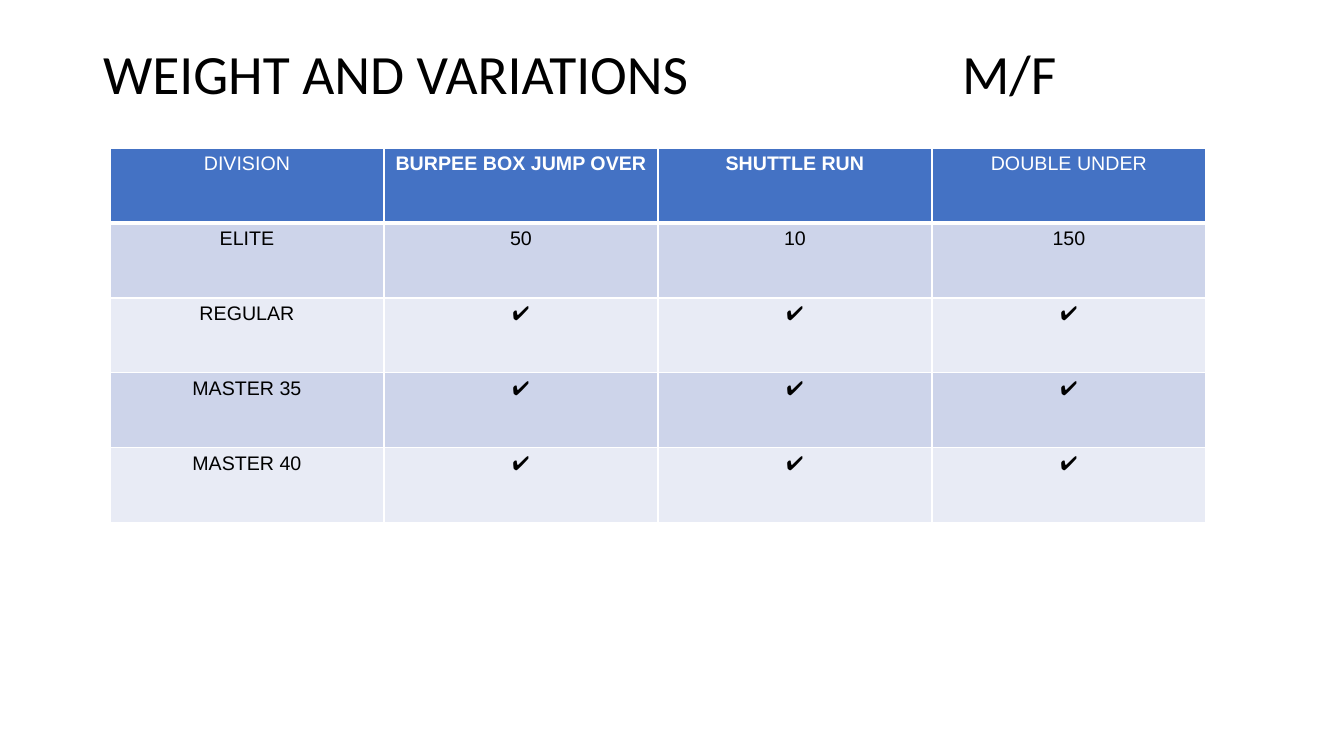
from dataclasses import dataclass

from lxml import etree
from pptx import Presentation
from pptx.dml.color import RGBColor
from pptx.enum.text import MSO_ANCHOR, MSO_AUTO_SIZE, PP_ALIGN
from pptx.oxml.ns import qn
from pptx.slide import Slide
from pptx.table import _Cell
from pptx.util import Emu, Pt

LEFT, CENTER = PP_ALIGN.LEFT, PP_ALIGN.CENTER
MIDDLE = MSO_ANCHOR.MIDDLE
NO_FIT = MSO_AUTO_SIZE.NONE

BLACK = RGBColor(0x00, 0x00, 0x00)
WHITE = RGBColor(0xFF, 0xFF, 0xFF)
BLUE = RGBColor(0x44, 0x72, 0xC4)
DARK = RGBColor(0xCD, 0xD4, 0xEA)
LIGHT = RGBColor(0xE8, 0xEB, 0xF5)

TITLE_ONLY = 5
COL_W, ROW_H = 274, 75
TAB = 859
CHECK = "✔︎"


@dataclass
class Row:
    texts: list[str]
    fill: RGBColor
    color: RGBColor = BLACK
    bold: tuple[int, ...] = ()
    top: int = 1
    base: int = 1


ROWS = [
    Row(["DIVISION", "BURPEE BOX JUMP OVER", "SHUTTLE RUN", "DOUBLE UNDER"],
        BLUE, WHITE, bold=(1, 2), base=3),
    Row(["ELITE", "50", "10", "150"], DARK, top=3),
    Row(["REGULAR"] + [CHECK] * 3, LIGHT),
    Row(["MASTER 35"] + [CHECK] * 3, DARK),
    Row(["MASTER 40"] + [CHECK] * 3, LIGHT),
]


def px(count: int) -> Emu:
    return Emu(round(count * 914400 / 100.8))


def add_title(slide: Slide) -> None:
    title = slide.shapes.title
    title.left, title.top = px(93), px(40)
    title.width, title.height = px(1159), px(73)
    frame = title.text_frame
    frame.text = "WEIGHT AND VARIATIONS\tM/F"
    frame.auto_size = NO_FIT
    frame.vertical_anchor = MIDDLE
    para = frame.paragraphs[0]
    para.alignment = LEFT
    para.line_spacing = 0.9
    stops = etree.SubElement(para._p.get_or_add_pPr(), qn("a:tabLst"))
    etree.SubElement(stops, qn("a:tab"), pos=str(px(TAB)), algn="l")
    for run in para.runs:
        run.font.name = "Calibri"
        run.font.size = Pt(39.6)
        run.font.color.rgb = BLACK


def add_edges(cell: _Cell, row: Row) -> None:
    props = cell._tc.get_or_add_tcPr()
    edges = {"lnL": 1, "lnR": 1, "lnT": row.top, "lnB": row.base}
    for side, width in edges.items():
        line = etree.SubElement(props, qn(f"a:{side}"), w=str(Pt(width)))
        fill = etree.SubElement(line, qn("a:solidFill"))
        etree.SubElement(fill, qn("a:srgbClr"), val=str(WHITE))


def fill_cell(cell: _Cell, row: Row, text: str, bold: bool) -> None:
    add_edges(cell, row)
    cell.fill.solid()
    cell.fill.fore_color.rgb = row.fill
    cell.text_frame.text = text
    para = cell.text_frame.paragraphs[0]
    para.alignment = CENTER
    font = para.runs[0].font
    font.name = "Arial"
    font.size = Pt(14)
    font.bold = bold
    font.color.rgb = row.color


def add_grid(slide: Slide) -> None:
    count = len(ROWS[0].texts)
    table = slide.shapes.add_table(
        len(ROWS), count, px(110), px(148),
        px(count * COL_W), px(len(ROWS) * ROW_H)).table
    table.horz_banding = False
    for col in table.columns:
        col.width = px(COL_W)
    for y, row in enumerate(ROWS):
        table.rows[y].height = px(ROW_H)
        for x, text in enumerate(row.texts):
            fill_cell(table.cell(y, x), row, text, x in row.bold)


def main() -> None:
    deck = Presentation()
    deck.slide_width, deck.slide_height = px(1344), px(756)
    slide = deck.slides.add_slide(deck.slide_layouts[TITLE_ONLY])
    add_title(slide)
    add_grid(slide)
    deck.save("out.pptx")


if __name__ == "__main__":
    main()
